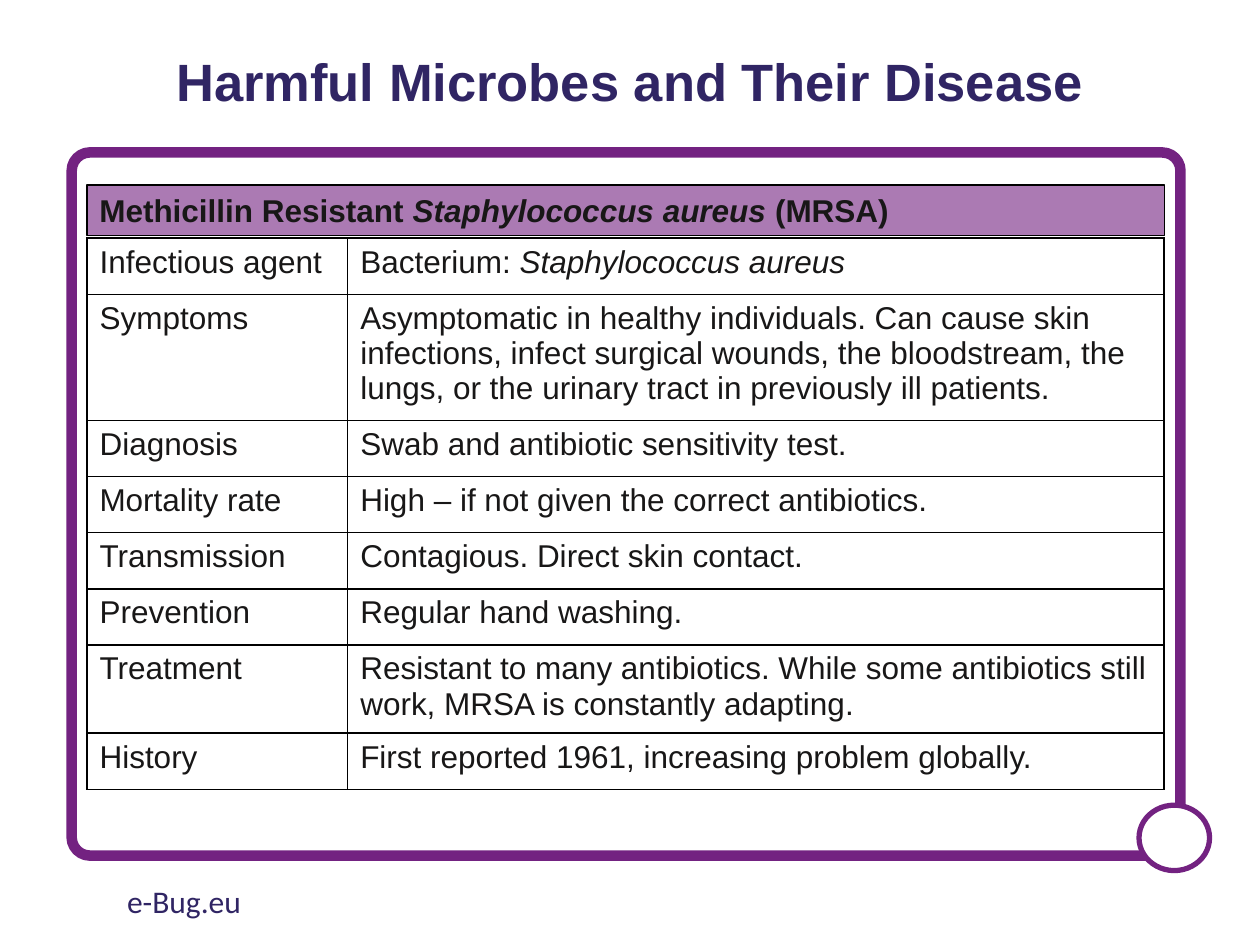
from lxml import etree
from pptx import Presentation
from pptx.dml.color import RGBColor
from pptx.enum.shapes import MSO_SHAPE
from pptx.enum.text import MSO_ANCHOR, PP_ALIGN
from pptx.oxml.ns import qn
from pptx.util import Pt

RECT, ROUND, OVAL = MSO_SHAPE.RECTANGLE, MSO_SHAPE.ROUNDED_RECTANGLE, MSO_SHAPE.OVAL
CENTER, LEFT = PP_ALIGN.CENTER, PP_ALIGN.LEFT
TOP, MIDDLE = MSO_ANCHOR.TOP, MSO_ANCHOR.MIDDLE

NAVY, PURPLE, LILAC, INK = "302564", "732281", "AB7AB3", "181717"
BLACK, WHITE = "000000", "FFFFFF"

# Content: each text is a list of (words, italic) runs
SPECIES = "Staphylococcus aureus"
TITLE = [("Harmful Microbes and Their Disease", False)]
HEADING = [("Methicillin Resistant ", False), (SPECIES + " ", True), ("(MRSA)", False)]
FOOTER = [("e-Bug.eu", False)]
ROWS = [  # label, text, row height
    ("Infectious agent", [("Bacterium: ", False), (SPECIES, True)], 32.1),
    ("Symptoms", [("Asymptomatic in healthy individuals. Can cause skin infections, "
                   "infect surgical wounds, the bloodstream, the lungs, or the urinary "
                   "tract in previously ill patients.", False)], 72),
    ("Diagnosis", [("Swab and antibiotic sensitivity test.", False)], 32.1),
    ("Mortality rate", [("High – if not given the correct antibiotics.", False)], 32.1),
    ("Transmission", [("Contagious. Direct skin contact.", False)], 32.1),
    ("Prevention", [("Regular hand washing.", False)], 32.1),
    ("Treatment", [("Resistant to many antibiotics. While some antibiotics still work, "
                    "MRSA is constantly adapting.", False)], 50.4),
    ("History", [("First reported 1961, increasing problem globally.", False)], 32.1),
]
TABLE_LEFT, TABLE_TOP, COLS = 49.7, 136.1, (149, 466.6)


def rgb(color):
    return RGBColor.from_string(color)


def write(tf, runs, size=18, color=INK, font="Arial", bold=False, align=LEFT):
    tf.word_wrap = True
    p = tf.paragraphs[0]
    p.alignment = align
    for words, italic in runs:
        r = p.add_run()
        r.text = words
        if italic:
            r.font.italic = True
    p.font.name, p.font.size, p.font.bold = font, Pt(size), bold
    p.font.color.rgb = rgb(color)
    return p


def add_text(box, runs, anchor=TOP, **style):
    tf = s.shapes.add_textbox(*map(Pt, box)).text_frame
    tf.vertical_anchor = anchor
    return write(tf, runs, **style)


def add_shape(shapes, kind, box, line, width, fill=None):
    sp = shapes.add_shape(kind, *map(Pt, box))
    sp.shadow.inherit = False
    sp.line.color.rgb, sp.line.width = rgb(line), Pt(width)
    if fill:
        sp.fill.solid()
        sp.fill.fore_color.rgb = rgb(fill)
    else:
        sp.fill.background()
    return sp


def set_borders(cell, color, width):
    tc_pr = cell._tc.get_or_add_tcPr()
    for side in ("lnL", "lnR", "lnT", "lnB"):
        ln = etree.SubElement(tc_pr, qn("a:" + side), w=str(Pt(width)))
        fill = etree.SubElement(ln, qn("a:solidFill"))
        etree.SubElement(fill, qn("a:srgbClr"), val=color)


prs = Presentation()
prs.slide_width, prs.slide_height = Pt(720), Pt(540)
s = prs.slides.add_slide(prs.slide_layouts[6])

# Title
p = add_text((49.7, 14.4, 620.6, 67.7), TITLE, MIDDLE,
             size=30, color=NAVY, bold=True, align=CENTER)
p.line_spacing = 0.9

# Heading bar
bar = add_shape(s.shapes, RECT, (TABLE_LEFT, 105.8, sum(COLS), 28.8), BLACK, 0.75, LILAC)
bar.text_frame.vertical_anchor = TOP
write(bar.text_frame, HEADING, bold=True)

# Facts table
heights = [row[2] for row in ROWS]
table = s.shapes.add_table(len(ROWS), len(COLS), Pt(TABLE_LEFT), Pt(TABLE_TOP),
                           Pt(sum(COLS)), Pt(sum(heights))).table
table.first_row = table.horz_banding = False
for column, width in zip(table.columns, COLS):
    column.width = Pt(width)
for i, (label, runs, height) in enumerate(ROWS):
    table.rows[i].height = Pt(height)
    for j, content in enumerate(([(label, False)], runs)):
        cell = table.cell(i, j)
        set_borders(cell, BLACK, 1)
        cell.fill.background()
        write(cell.text_frame, content)

# Frame with corner circle
group = s.shapes.add_group_shape()
frame = add_shape(group.shapes, ROUND, (41, 87.1, 633.6, 401.8), PURPLE, 6)
frame.adjustments[0] = 0.026
add_shape(group.shapes, OVAL, (650.9, 460.1, 40.3, 37.4), PURPLE, 3, WHITE)

# Footer
add_text((65.5, 500.4, 243.4, 28.8), FOOTER, color=NAVY, font="Calibri")

prs.save("out.pptx")
